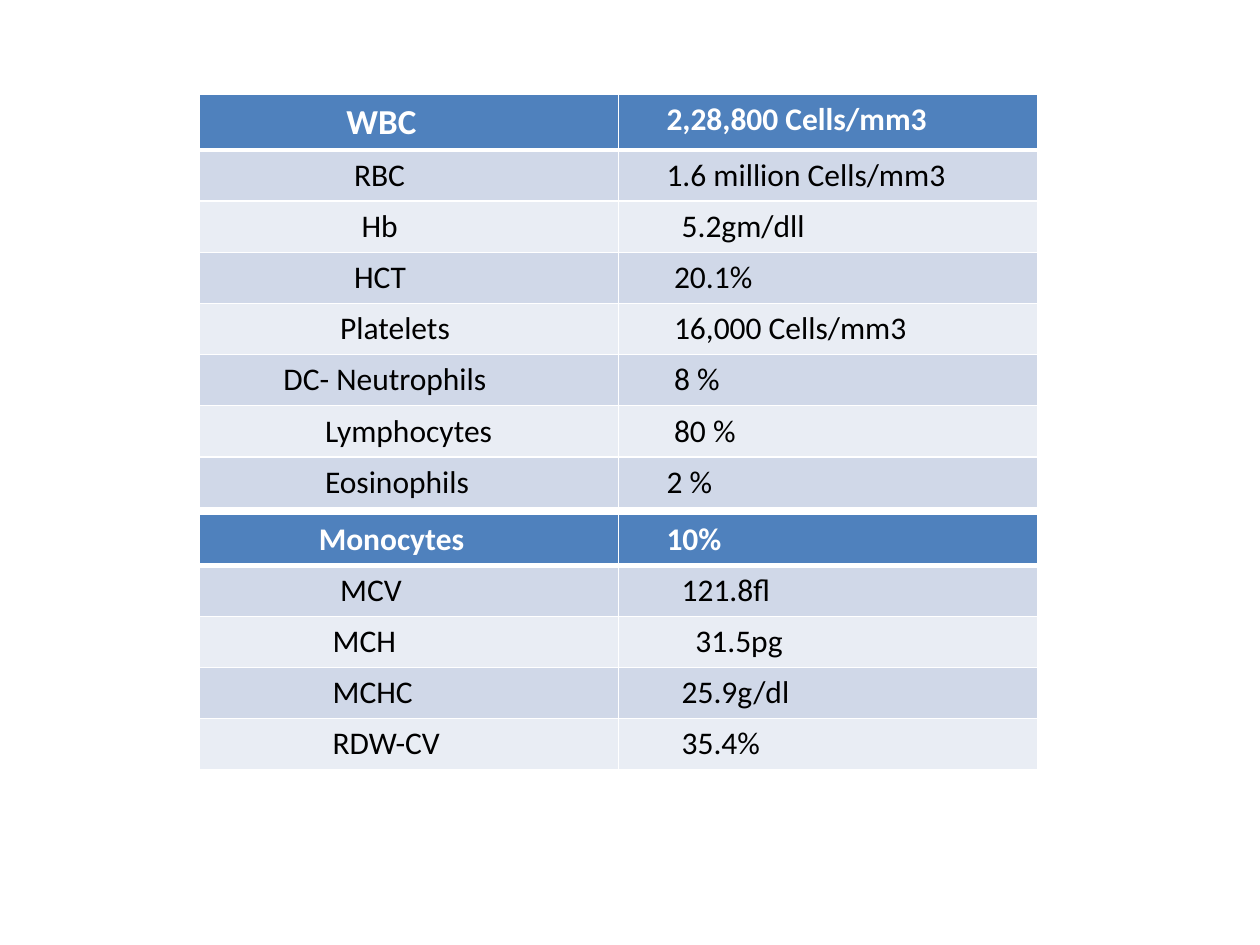
from lxml import etree
from pptx import Presentation
from pptx.dml.color import RGBColor
from pptx.oxml.ns import qn
from pptx.util import Inches, Pt

WHITE, BLACK, HEADER_FILL = "FFFFFF", "000000", "4F81BD"
BAND_FILLS = ("E9EDF4", "D0D8E8")
LEFT, COLUMN_WIDTH = 1.58, 3.33
BODY_SIZE, WBC_SIZE = 18, 20
THIN, THICK = 1, 3

# Each row: name, left inset in inches, value, left inset in inches
BLOOD_COUNT = [
    ("WBC", 1.17, "2,28,800 Cells/mm3", 0.38),
    ("RBC", 1.23, "1.6 million Cells/mm3", 0.38),
    ("Hb", 1.29, "5.2gm/dll", 0.5),
    ("HCT", 1.23, "20.1%", 0.44),
    ("Platelets", 1.12, "16,000 Cells/mm3", 0.44),
    ("DC- Neutrophils", 0.67, "8 %", 0.44),
    ("Lymphocytes", 1.0, "80 %", 0.44),
    ("Eosinophils", 1.0, "2 %", 0.38),
]
RED_CELL_INDICES = [
    ("Monocytes", 0.95, "10%", 0.38),
    ("MCV", 1.12, "121.8fl", 0.5),
    ("MCH", 1.06, "31.5pg", 0.61),
    ("MCHC", 1.06, "25.9g/dl", 0.5),
    ("RDW-CV", 1.06, "35.4%", 0.5),
]
TABLES = [(0.75, 3.25, BLOOD_COUNT), (4.08, 2.03, RED_CELL_INDICES)]


def color(value):
    """Return the colour for a hex string."""
    return RGBColor.from_string(value)


def set_borders(cell, top, bottom):
    """Draw white borders around a cell."""
    properties = cell._tc.get_or_add_tcPr()
    for side, width in (("L", THIN), ("R", THIN), ("T", top), ("B", bottom)):
        line = etree.SubElement(properties, qn(f"a:ln{side}"), w=str(Pt(width)))
        fill = etree.SubElement(line, qn("a:solidFill"))
        etree.SubElement(fill, qn("a:srgbClr"), val=WHITE)


def fill_cell(cell, text, inset, row_index):
    """Write and style one cell according to its row."""
    is_header = row_index == 0
    set_borders(cell, THICK if row_index == 1 else THIN, THICK if is_header else THIN)
    cell.fill.solid()
    cell.fill.fore_color.rgb = color(HEADER_FILL if is_header else BAND_FILLS[row_index % 2])
    cell.margin_left = Inches(inset)
    run = cell.text_frame.paragraphs[0].add_run()
    run.text = text
    run.font.name = "Calibri"
    run.font.size = Pt(WBC_SIZE if text == "WBC" else BODY_SIZE)
    run.font.bold = is_header
    run.font.color.rgb = color(WHITE if is_header else BLACK)


def add_results(slide, top, height, results):
    """Add one table of test results."""
    table = slide.shapes.add_table(
        len(results), 2, Inches(LEFT), Inches(top),
        Inches(2 * COLUMN_WIDTH), Inches(height),
    ).table
    for row_index, (name, name_inset, value, value_inset) in enumerate(results):
        fill_cell(table.cell(row_index, 0), name, name_inset, row_index)
        fill_cell(table.cell(row_index, 1), value, value_inset, row_index)


def main():
    """Build the slide of blood test results."""
    presentation = Presentation()
    presentation.slide_width, presentation.slide_height = Inches(10), Inches(7.5)
    slide = presentation.slides.add_slide(presentation.slide_layouts[6])
    for top, height, results in TABLES:
        add_results(slide, top, height, results)
    presentation.save("out.pptx")


if __name__ == "__main__":
    main()
